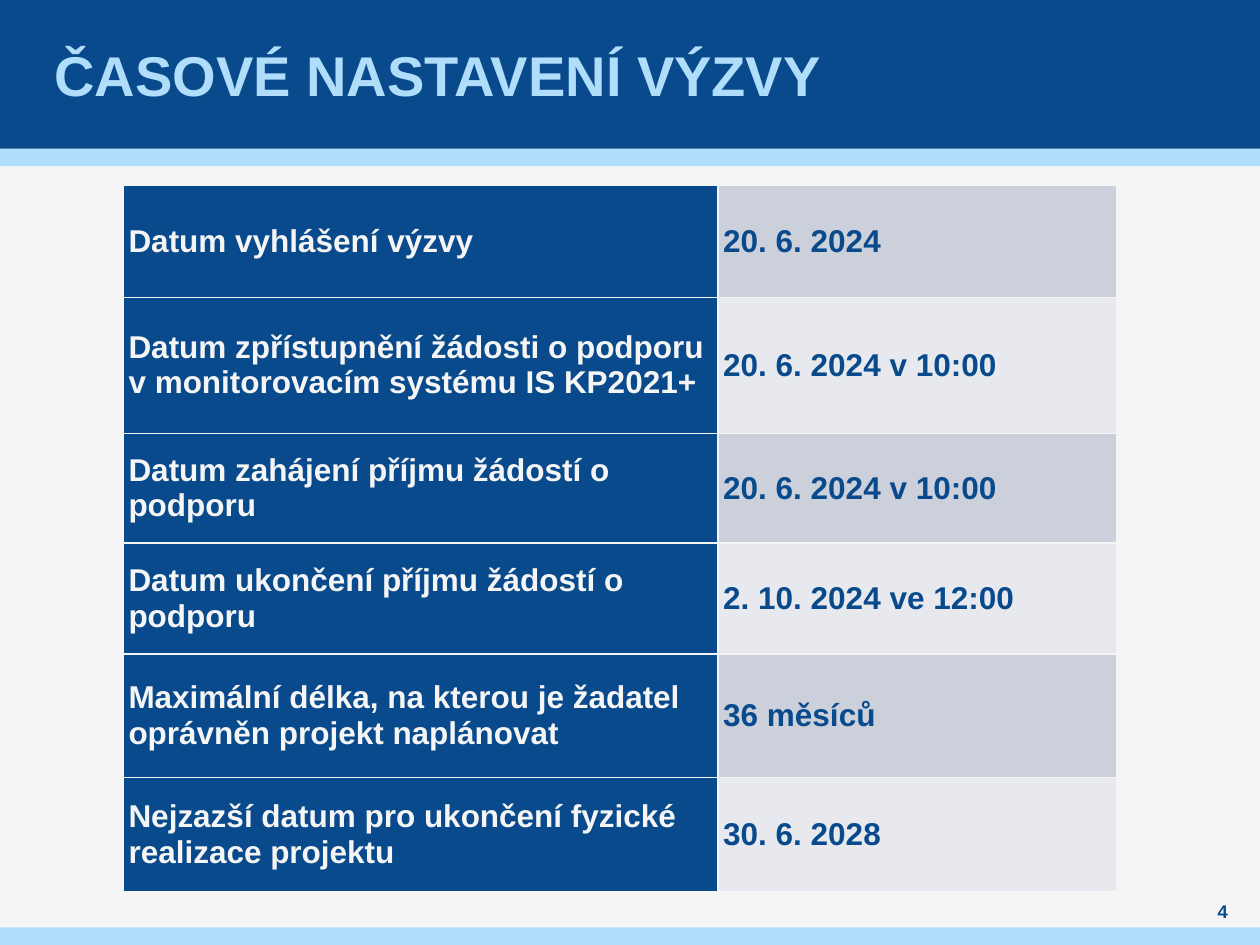
from lxml.etree import SubElement as Sub
from pptx import Presentation
from pptx.dml.color import RGBColor
from pptx.enum.shapes import MSO_SHAPE as Shape
from pptx.enum.text import MSO_ANCHOR as Anchor, PP_ALIGN as Align
from pptx.oxml.ns import qn
from pptx.util import Inches, Pt

NAVY, SKY, PALE = "084A8B", "AFDDFA", "F5F5F5"
BANDS = "CCD0DA", "E7E9EE"
WIDE, HIGH = 10, 7.5
HEAD, STRIP = 1.18, 0.14
COLS = 4.72, 3.16
ROWS = [
    (0.89, "Datum vyhlášení výzvy", "20. 6. 2024"),
    (1.08, "Datum zpřístupnění žádosti o podporu v monitorovacím systému IS KP2021+",
     "20. 6. 2024 v 10:00"),
    (0.87, "Datum zahájení příjmu žádostí o podporu", "20. 6. 2024 v 10:00"),
    (0.88, "Datum ukončení příjmu žádostí o podporu", "2. 10. 2024 ve 12:00"),
    (0.98, "Maximální délka, na kterou je žadatel oprávněn projekt naplánovat",
     "36 měsíců"),
    (0.91, "Nejzazší datum pro ukončení fyzické realizace projektu", "30. 6. 2028"),
]


def paint(fill, color):
    fill.solid()
    fill.fore_color.rgb = RGBColor.from_string(color)


def write(frame, text, size, color, align=Align.LEFT, indent=0, gap=0):
    """Put one bold paragraph into a text frame."""
    frame.word_wrap = True
    para = frame.paragraphs[0]
    para.text = text
    para.alignment = align
    para.space_before = para.space_after = Pt(gap)
    props = para._p.get_or_add_pPr()
    props.set("marL", str(Inches(indent)))
    props.set("indent", "0")
    font = para.runs[0].font
    font.name, font.size, font.bold = "Arial", Pt(size), True
    font.color.rgb = RGBColor.from_string(color)


def inset(part, side=0):
    """Centre the text upright, with margins at the sides only."""
    part.vertical_anchor = Anchor.MIDDLE
    part.margin_left = part.margin_right = Inches(side)
    part.margin_top = part.margin_bottom = 0


def add_bar(slide, box, color):
    bar = slide.shapes.add_shape(Shape.RECTANGLE, *map(Inches, box))
    bar.shadow.inherit = False
    paint(bar.fill, color)
    bar.line.fill.background()
    slide.shapes.title.element.addprevious(bar.element)


def add_title(slide, box, text):
    title = slide.shapes.title
    title.left, title.top, title.width, title.height = map(Inches, box)
    inset(title.text_frame, 0.04)
    write(title.text_frame, text, 32, SKY)


def add_number(slide, box, text):
    frame = slide.shapes.add_textbox(*map(Inches, box)).text_frame
    inset(frame)
    write(frame, text, 10.5, NAVY, Align.CENTER)


def edge(cell, color, width):
    props = cell._tc.get_or_add_tcPr()
    for side in "LRTB":
        line = Sub(props, qn(f"a:ln{side}"), w=str(Pt(width)))
        Sub(Sub(line, qn("a:solidFill")), qn("a:srgbClr"), val=color)


def add_dates(slide, left, top):
    high = sum(row[0] for row in ROWS)
    box = map(Inches, (left, top, sum(COLS), high))
    table = slide.shapes.add_table(len(ROWS), len(COLS), *box).table
    for col, wide in zip(table.columns, COLS):
        col.width = Inches(wide)
    for i, (tall, *texts) in enumerate(ROWS):
        table.rows[i].height = Inches(tall)
        looks = (NAVY, PALE), (BANDS[i % 2], NAVY)
        for j, (text, (back, ink)) in enumerate(zip(texts, looks)):
            cell = table.cell(i, j)
            inset(cell)
            edge(cell, PALE, 1)
            paint(cell.fill, back)
            write(cell.text_frame, text, 18, ink, indent=0.04, gap=3)


def main():
    deck = Presentation()
    deck.slide_width, deck.slide_height = Inches(WIDE), Inches(HIGH)
    slide = deck.slides.add_slide(deck.slide_layouts[5])
    paint(slide.background.fill, PALE)
    add_bar(slide, (0, HEAD, WIDE, STRIP), SKY)
    add_bar(slide, (0, 0, WIDE, HEAD), NAVY)
    add_bar(slide, (0, HIGH - STRIP, WIDE, STRIP), SKY)
    add_title(slide, (0.39, 0, 9.21, HEAD), "ČASOVÉ NASTAVENÍ VÝZVY")
    add_number(slide, (9.45, 7.13, 0.51, 0.2), "4")
    add_dates(slide, 0.98, 1.47)
    deck.save("out.pptx")


if __name__ == "__main__":
    main()
